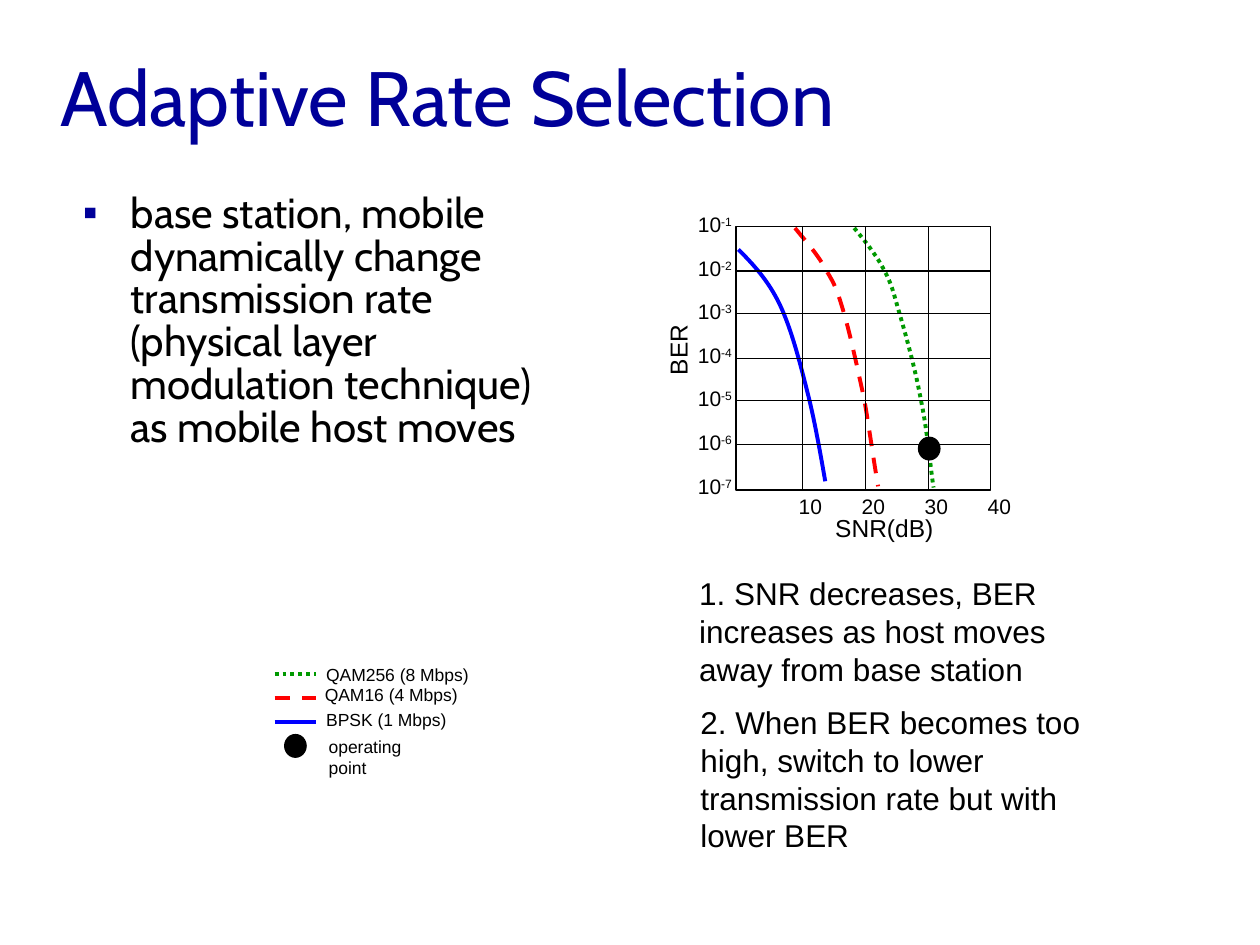
from lxml.etree import SubElement
from pptx import Presentation
from pptx.dml.color import RGBColor
from pptx.enum.dml import MSO_LINE
from pptx.enum.shapes import MSO_CONNECTOR, MSO_SHAPE
from pptx.enum.text import MSO_ANCHOR, MSO_AUTO_SIZE, PP_ALIGN
from pptx.oxml.ns import qn
from pptx.util import Emu, Pt

EMU_PER_PX = 9144
COLORS = {"navy": "000099", "black": "000000", "blue": "0000FF",
          "red": "FF0000", "green": "009900"}
SCHEMES = [
    ("QAM256 (8 Mbps)", "green", MSO_LINE.ROUND_DOT,
     [(94, 1), (103, 12), (112, 23), (118, 35), (124, 46), (125, 52), (130, 69),
      (135, 86), (143, 115), (147, 138), (152, 161), (155, 196), (157, 207)]),
    ("QAM16 (4 Mbps)", "red", MSO_LINE.DASH,
     [(47, 1), (56, 12), (66, 23), (72, 35), (79, 46), (81, 52), (86, 69),
      (91, 86), (97, 114), (102, 137), (106, 160), (109, 183), (113, 206)]),
    ("BPSK (1 Mbps)", "blue", None,
     [(2, 18), (14, 30), (26, 43), (35, 62), (44, 81), (51, 108), (57, 132),
      (63, 155), (69, 191), (71, 202)]),
]


def px(length):
    return Emu(round(length * EMU_PER_PX))


def rgb(name):
    return RGBColor.from_string(COLORS[name])


def format_span(span, size, font="Arial", color="black", raised=False):
    span.font.size = Pt(size)
    span.font.name = font
    span.font.color.rgb = rgb(color)
    if raised:
        span.font._element.set("baseline", "30000")


def add_text(page, box, text, size, font="Arial", color="black", wrap=False,
             grow=True, exponent=None, rotation=0):
    text_box = page.shapes.add_textbox(*map(px, box))
    text_box.rotation = rotation
    frame = text_box.text_frame
    frame.word_wrap = wrap
    frame.auto_size = MSO_AUTO_SIZE.SHAPE_TO_FIT_TEXT if grow else MSO_AUTO_SIZE.NONE
    para = frame.paragraphs[0]
    span = para.add_run()
    span.text = text
    format_span(span, size, font, color)
    if exponent:
        span = para.add_run()
        span.text = exponent
        format_span(span, size, font, color, raised=True)
    return para


def format_line(line, color="black", width=0.75, dash=None):
    line.color.rgb = rgb(color)
    line.width = Pt(width)
    if dash:
        line.dash_style = dash


def add_line(page, start, end, **line_format):
    connector = page.shapes.add_connector(
        MSO_CONNECTOR.STRAIGHT, *map(px, start + end))
    format_line(connector.line, **line_format)
    SubElement(connector._element.spPr, qn("a:effectLst"))
    return connector


def add_operating_point(page, left, top):
    dot = page.shapes.add_shape(MSO_SHAPE.OVAL, px(left), px(top), px(17), px(18))
    dot.shadow.inherit = False
    dot.fill.solid()
    dot.fill.fore_color.rgb = rgb("black")
    format_line(dot.line)


def add_curve(page, left, top, controls, color, dash):
    points = [(left + x, top + y) for x, y in controls]
    builder = page.shapes.build_freeform(*points[0], scale=EMU_PER_PX)
    builder.add_line_segments(points[1:], close=False)
    curve = builder.convert_to_shape()
    segments = list(curve._element.iter(qn("a:lnTo")))
    outline = segments[0].getparent()
    for first in range(0, len(segments), 3):
        bezier = SubElement(outline, qn("a:cubicBezTo"))
        for segment in segments[first:first + 3]:
            bezier.append(segment[0])
            outline.remove(segment)
    curve.shadow.inherit = False
    curve.fill.background()
    format_line(curve.line, color, 2.25, dash)


def add_title(page, box, text):
    title = page.shapes.title
    title.left, title.top, title.width, title.height = map(px, box)
    title.text_frame.vertical_anchor = MSO_ANCHOR.MIDDLE
    para = title.text_frame.paragraphs[0]
    para.alignment = PP_ALIGN.LEFT
    span = para.add_run()
    span.text = text
    format_span(span, 44, "Cabin", "navy")


def add_bullet(page, box, text):
    para = add_text(page, box, text, 24, font="Cabin", wrap=True, grow=False)
    para.line_spacing = 0.85
    para.space_before = Pt(5)
    properties = para._p.get_or_add_pPr()
    properties.set("marL", str(px(38)))
    properties.set("indent", str(-px(38)))
    bullet_color = SubElement(properties, qn("a:buClr"))
    SubElement(bullet_color, qn("a:srgbClr"), val=COLORS["navy"])
    SubElement(properties, qn("a:buFont"), typeface="Arial")
    SubElement(properties, qn("a:buChar"), char="▪")


def add_legend(page, left, top):
    labels = [(31, 0, 133), (30, 16, 126), (31, 36, 115)]
    for index, (name, color, dash, _) in enumerate(SCHEMES):
        middle = top + 13 + 19 * index
        add_line(page, (left, middle), (left + 33, middle),
                 color=color, width=2.25, dash=dash)
        label_left, label_top, label_width = labels[index]
        add_text(page, (left + label_left, top + label_top, label_width, 27), name, 10)
    add_operating_point(page, left + 8, top + 61)
    add_text(page, (left + 33, top + 57, 111, 27), "operating point", 10)


def add_ber_plot(page, left, top, width, height):
    for _, color, dash, controls in reversed(SCHEMES):
        add_curve(page, left, top, controls, color, dash)
    frame = page.shapes.add_shape(
        MSO_SHAPE.RECTANGLE, *map(px, (left, top, width, height)))
    frame.shadow.inherit = False
    frame.fill.background()
    format_line(frame.line)

    for row in range(7):
        y = top + round(34.6 * row)
        add_text(page, (left - 40, y - 17, 48, 30), "10", 12, exponent=f"-{row + 1}")
        if 0 < row < 6:
            line = add_line(page, (left, y), (left + width, y))
            if row == 3:
                line.begin_connect(frame, 1)
                line.end_connect(frame, 3)
    for column in range(4):
        x = left + 53 + 50 * column
        add_text(page, (x - 13, top + height - 2, 39, 30), str(10 * (column + 1)), 12)
        if column < 3:
            add_line(page, (x, top), (x, top + height))

    add_text(page, (left + 69, top + 222, 98, 33), "SNR(dB)", 14)
    add_text(page, (left - 76, top + 81, 60, 33), "BER", 14, rotation=270)
    add_operating_point(page, left + 145, top + 167)


def add_notes_on_rate(page, left, top):
    add_text(page, (left, top, 350, 100),
             "1. SNR decreases, BER increases as host moves away from base station",
             18, wrap=True)
    add_text(page, (left + 1, top + 102, 350, 130),
             "2. When BER becomes too high, switch to lower transmission rate "
             "but with lower BER", 18, wrap=True)


def main():
    deck = Presentation()
    deck.slide_width, deck.slide_height = px(1000), px(750)
    page = deck.slides.add_slide(deck.slide_layouts[5])
    add_title(page, (38, 30, 850, 92), "Adaptive Rate Selection")
    add_bullet(page, (56, 149, 410, 508),
               "base station, mobile dynamically change transmission rate "
               "(physical layer modulation technique) as mobile host moves")
    add_legend(page, 218, 522)
    add_ber_plot(page, 584, 180, 202, 209)
    add_notes_on_rate(page, 545, 451)
    deck.save("out.pptx")


if __name__ == "__main__":
    main()
